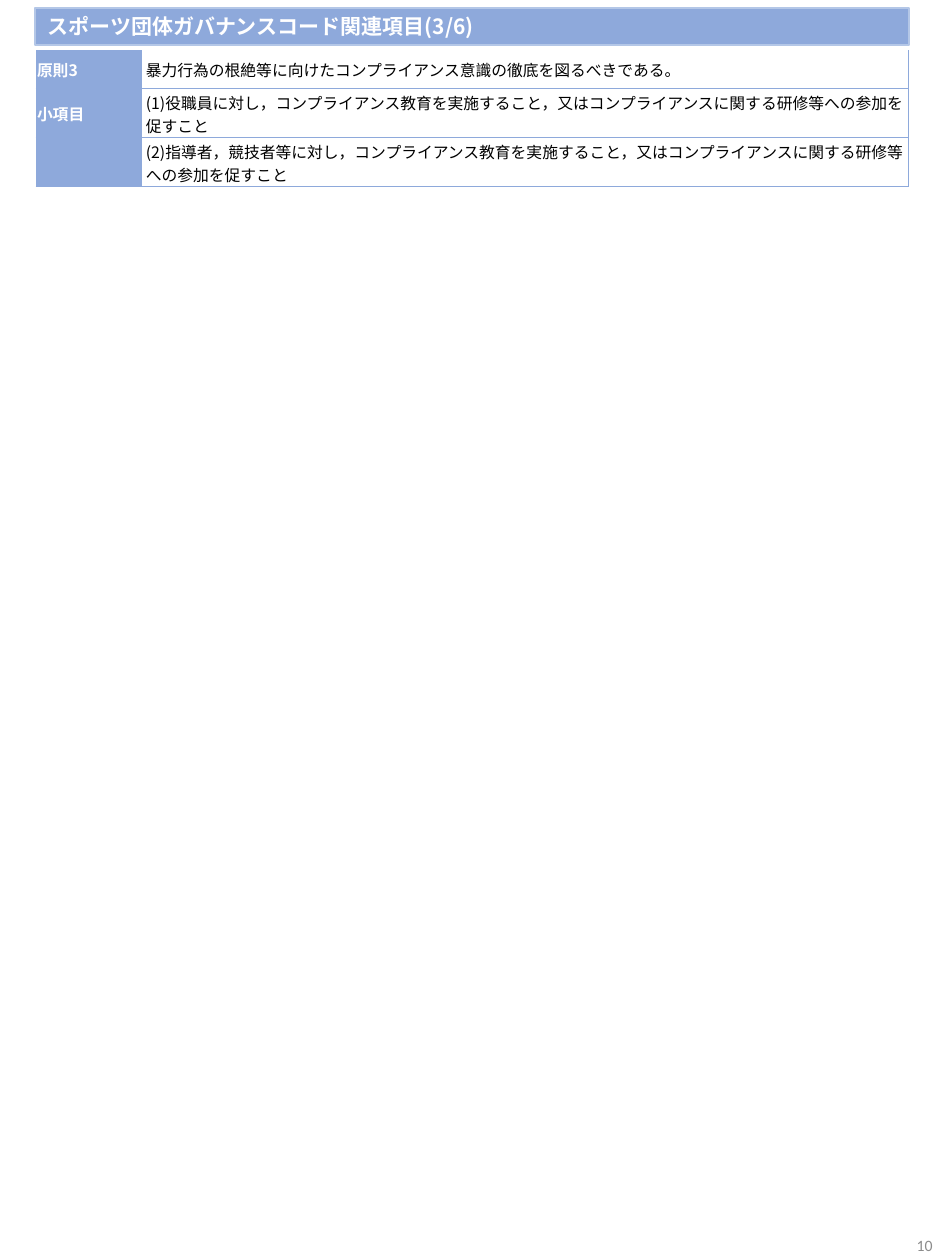
import dataclasses

import lxml.etree
import pptx
import pptx.dml.color
import pptx.enum.text
import pptx.oxml.ns
import pptx.util

EMU_PER_PX = 914400 / 126
COLORS = {"band": "8EA9DB", "edge": "B4C7E7", "white": "FFFFFF", "black": "000000", "gray": "8C8C8C"}
JAPANESE = "Noto Sans CJK JP"
LABEL_WIDTHS = [35, 35, 35]
CLAUSE_WIDTH = 768
NO_GRID_STYLE = "{2D5ABB26-0587-4C30-8999-92F81FD0307C}"


@dataclasses.dataclass(frozen=True)
class TextStyle:
    size: int
    color: str
    font: str = JAPANESE
    bold: bool = False


@dataclasses.dataclass(frozen=True)
class Clause:
    label: str
    text: str
    height: int
    sides: tuple[str, ...]


HEADING = TextStyle(12, "white", bold=True)
LABEL = TextStyle(9, "white", bold=True)
BODY = TextStyle(9, "black")
PAGE = TextStyle(9, "gray", "Calibri")

CLAUSES = [
    Clause("原則3", "暴力行為の根絶等に向けたコンプライアンス意識の徹底を図るべきである。", 35, ("L", "R", "B")),
    Clause("小項目", "(1)役職員に対し，コンプライアンス教育を実施すること，又はコンプライアンスに関する研修等への参加を促すこと", 49, ("L", "R", "T")),
    Clause("", "(2)指導者，競技者等に対し，コンプライアンス教育を実施すること，又はコンプライアンスに関する研修等への参加を促すこと", 49, ("L", "R", "B")),
]


def px(length: int) -> pptx.util.Emu:
    return pptx.util.Emu(round(length * EMU_PER_PX))


def rgb(name: str) -> pptx.dml.color.RGBColor:
    return pptx.dml.color.RGBColor.from_string(COLORS[name])


def add_run(paragraph, text: str, style: TextStyle) -> None:
    run = paragraph.add_run()
    run.text = text
    run.font.size = pptx.util.Pt(style.size)
    run.font.bold = style.bold
    run.font.name = style.font
    run.font.color.rgb = rgb(style.color)
    latin = run.font._element.find(pptx.oxml.ns.qn("a:latin"))
    east_asian = lxml.etree.Element(pptx.oxml.ns.qn("a:ea"), typeface=style.font)
    latin.addnext(east_asian)


def set_margins(cell, left: int) -> None:
    cell.margin_left = px(left)
    cell.margin_right = cell.margin_top = px(1)
    cell.margin_bottom = 0
    cell.vertical_anchor = pptx.enum.text.MSO_ANCHOR.MIDDLE


def set_borders(cell, sides: tuple[str, ...]) -> None:
    properties = cell._tc.get_or_add_tcPr()
    ordered = [side for side in "LRTB" if side in sides]
    for position, side in enumerate(ordered):
        line = lxml.etree.Element(pptx.oxml.ns.qn(f"a:ln{side}"), w=str(pptx.util.Pt(0.5)))
        fill = lxml.etree.SubElement(line, pptx.oxml.ns.qn("a:solidFill"))
        lxml.etree.SubElement(fill, pptx.oxml.ns.qn("a:srgbClr"), val=COLORS["band"])
        properties.insert(position, line)


def add_heading(slide, text: str) -> None:
    heading = slide.shapes.title
    heading.left, heading.top, heading.width, heading.height = map(px, (35, 8, 874, 37))
    heading.fill.solid()
    heading.fill.fore_color.rgb = rgb("band")
    heading.line.color.rgb = rgb("edge")
    heading.line.width = pptx.util.Pt(0.75)
    frame = heading.text_frame
    frame.auto_size = pptx.enum.text.MSO_AUTO_SIZE.NONE
    frame.vertical_anchor = pptx.enum.text.MSO_ANCHOR.MIDDLE
    frame.paragraphs[0].alignment = pptx.enum.text.PP_ALIGN.LEFT
    add_run(frame.paragraphs[0], text, HEADING)


def add_clauses(slide, clauses: list[Clause]) -> None:
    widths = LABEL_WIDTHS + [CLAUSE_WIDTH]
    total_height = sum(clause.height for clause in clauses)
    frame = slide.shapes.add_table(len(clauses), len(widths), px(36), px(50), px(sum(widths)), px(total_height))
    table = frame.table
    table.first_row = table.horz_banding = False
    table._tbl.tblPr.find(pptx.oxml.ns.qn("a:tableStyleId")).text = NO_GRID_STYLE
    for column, width in zip(table.columns, widths):
        column.width = px(width)
    for row, clause in enumerate(clauses):
        table.rows[row].height = px(clause.height)
        for column in range(len(LABEL_WIDTHS)):
            label = table.cell(row, column)
            set_margins(label, 1)
            label.fill.solid()
            label.fill.fore_color.rgb = rgb("band")
            set_borders(label, ("L", "R", "B"))
        if clause.label:
            table.cell(row, 0).merge(table.cell(row, 1))
            add_run(table.cell(row, 0).text_frame.paragraphs[0], clause.label, LABEL)
        body = table.cell(row, len(LABEL_WIDTHS))
        set_margins(body, 5)
        body.fill.background()
        set_borders(body, clause.sides)
        add_run(body.text_frame.paragraphs[0], clause.text, BODY)


def add_page_number(slide, number: str) -> None:
    frame = slide.shapes.add_textbox(px(876), px(1220), px(69), px(41)).text_frame
    frame.word_wrap = True
    frame.vertical_anchor = pptx.enum.text.MSO_ANCHOR.BOTTOM
    frame.paragraphs[0].alignment = pptx.enum.text.PP_ALIGN.RIGHT
    add_run(frame.paragraphs[0], number, PAGE)


def main() -> None:
    deck = pptx.Presentation()
    deck.slide_width, deck.slide_height = px(945), px(1260)
    slide = deck.slides.add_slide(deck.slide_layouts[5])
    add_heading(slide, "スポーツ団体ガバナンスコード関連項目(3/6)")
    add_page_number(slide, "10")
    add_clauses(slide, CLAUSES)
    deck.save("out.pptx")


if __name__ == "__main__":
    main()
